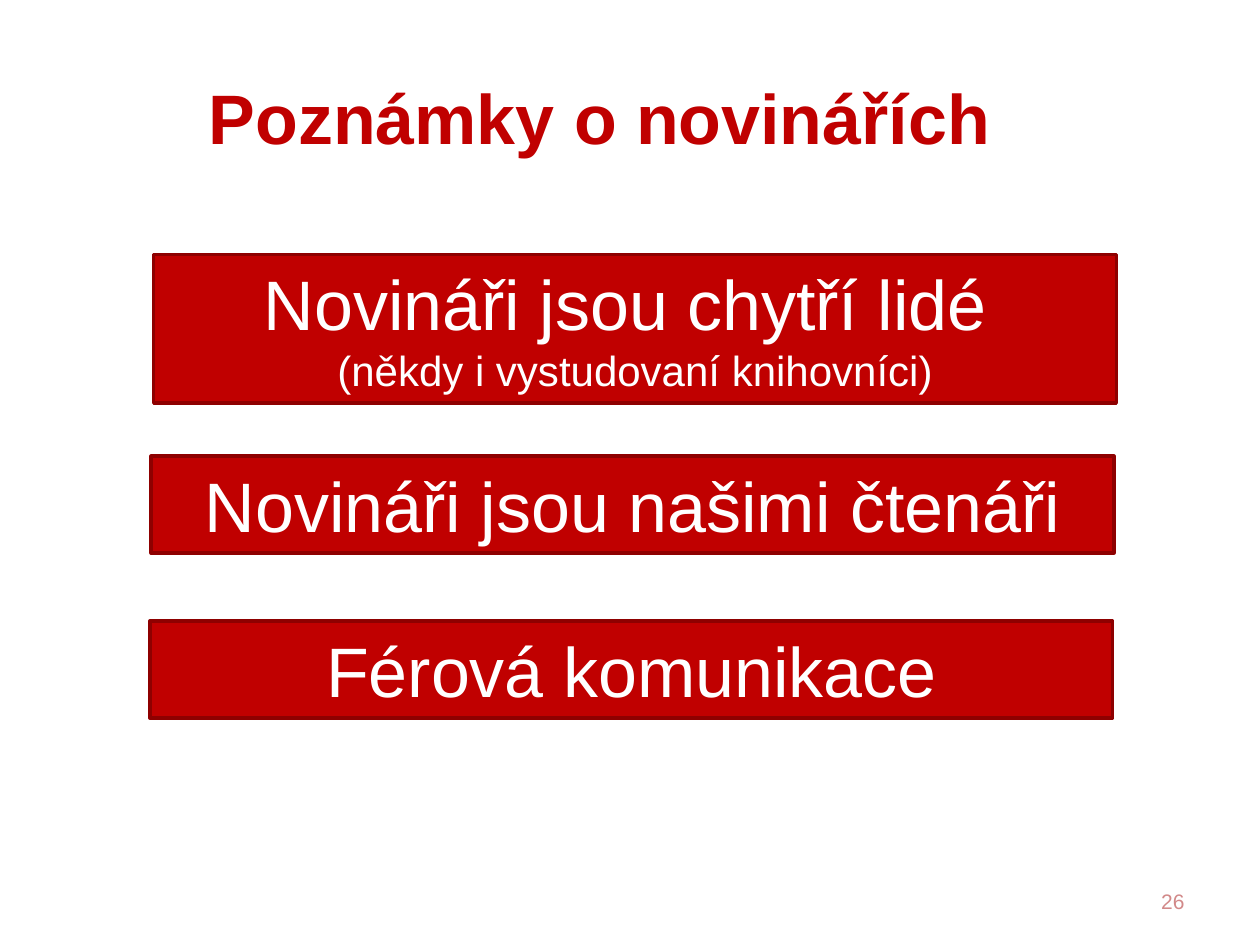
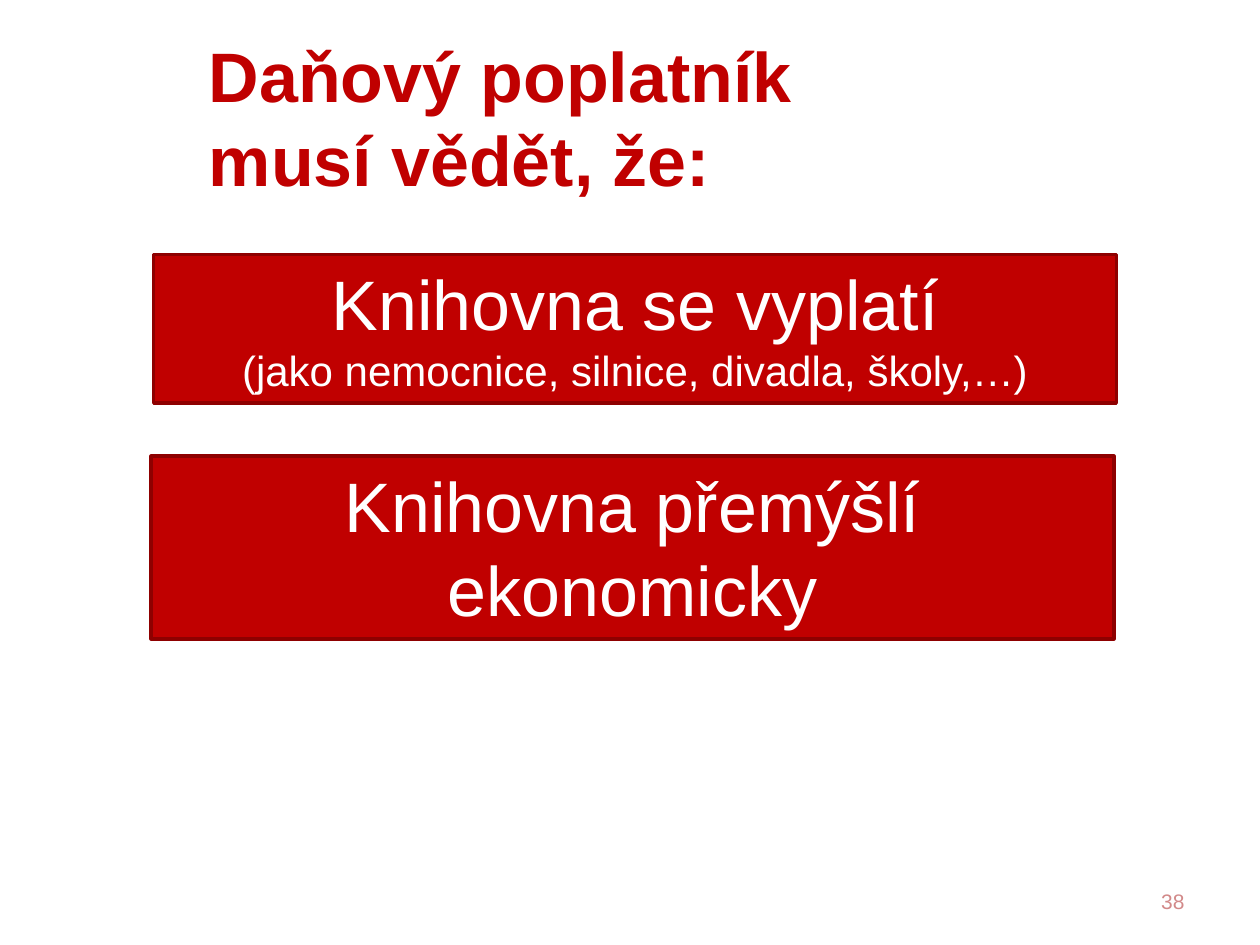
from pptx import Presentation
from pptx import util as u
from pptx.dml.color import RGBColor
from pptx.enum import shapes, text

RED, EDGE, WHITE, PALE = "C00000", "8E0000", "FFFFFF", "D28989"
FONT = "Arial"
LEADING = 1.2
BAND_WIDTH = 7.64


def colour(value):
    """Turn a hex string into a colour."""
    return RGBColor.from_string(value)


def write(para, words, size=40, ink=WHITE, bold=False, align=text.PP_ALIGN.LEFT):
    """Fill a paragraph with words in one format."""
    para.text = words
    para.alignment = align
    para.line_spacing = u.Pt(size * LEADING)
    for span in para.runs:
        span.font.name = FONT
        span.font.size = u.Pt(size)
        span.font.bold = bold
        span.font.color.rgb = colour(ink)


class Deck:
    """Hold the presentation, its style and the current page."""

    def __init__(self):
        """Start an empty deck of 10 by 7.5 inch pages."""
        self.deck = Presentation()
        self.deck.slide_width = u.Inches(10)
        self.deck.slide_height = u.Inches(7.5)
        self.page = None

    def add_page(self, title, number):
        """Add a page with its title and page number."""
        self.page = self.deck.slides.add_slide(self.deck.slide_layouts[6])
        self.label(title, 1.56, 0.3, 7.94, 1.25, ink=RED, bold=True)
        self.label(str(number), 7.17, 6.95, 2.33, 0.4, size=12, ink=PALE,
                   align=text.PP_ALIGN.RIGHT)

    def label(self, words, left, top, width, height, **style):
        """Add a vertically centred text box."""
        box = self.page.shapes.add_textbox(*map(u.Inches, (left, top, width, height)))
        frame = box.text_frame
        frame.word_wrap = True
        frame.vertical_anchor = text.MSO_ANCHOR.MIDDLE
        write(frame.paragraphs[0], words, **style)

    def band(self, words, left, top, height, note=None):
        """Add a red band with a statement and an optional smaller note."""
        box = self.page.shapes.add_shape(
            shapes.MSO_SHAPE.RECTANGLE,
            *map(u.Inches, (left, top, BAND_WIDTH, height)))
        box.shadow.inherit = False
        box.fill.solid()
        box.fill.fore_color.rgb = colour(RED)
        box.line.color.rgb = colour(EDGE)
        box.line.width = u.Pt(2)
        frame = box.text_frame
        frame.word_wrap = True
        frame.auto_size = text.MSO_AUTO_SIZE.SHAPE_TO_FIT_TEXT
        frame.vertical_anchor = text.MSO_ANCHOR.TOP
        write(frame.paragraphs[0], words, align=text.PP_ALIGN.CENTER)
        if note:
            write(frame.add_paragraph(), note, size=24, align=text.PP_ALIGN.CENTER)

    def save(self):
        """Save the deck."""
        self.deck.save("out.pptx")


def main():
    """Build both pages."""
    deck = Deck()

    deck.add_page("Poznámky o novinářích", 26)
    deck.band("Novináři jsou našimi čtenáři", 1.2, 3.62, 0.77)
    deck.band("Férová komunikace", 1.19, 4.93, 0.77)
    deck.band("Novináři jsou chytří lidé ", 1.22, 2.02, 1.18,
              note="(někdy i vystudovaní knihovníci)")

    deck.add_page("Daňový poplatník \vmusí vědět, že:", 38)
    deck.band("Knihovna přemýšlí ekonomicky", 1.2, 3.62, 1.45)
    deck.band("Knihovna se vyplatí", 1.22, 2.02, 1.18,
              note="(jako nemocnice, silnice, divadla, školy,…)")

    deck.save()


if __name__ == "__main__":
    main()
